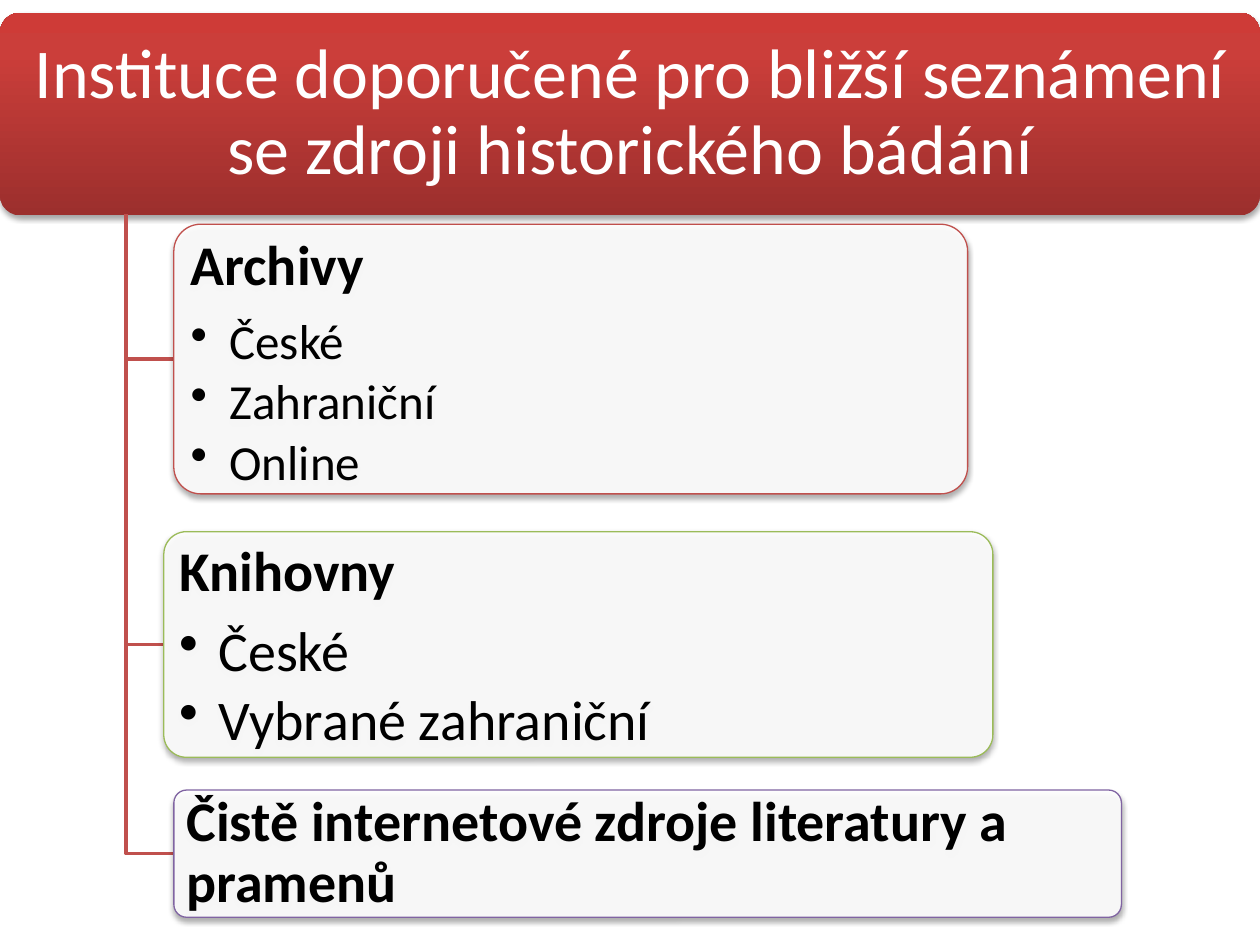
import copy

import lxml.etree
import pptx
import pptx.dml.color
import pptx.enum.shapes
import pptx.enum.text
import pptx.oxml.ns
import pptx.util

Inches, Pt = pptx.util.Inches, pptx.util.Pt
ANCHOR = pptx.enum.text.MSO_ANCHOR
ALIGN = pptx.enum.text.PP_ALIGN
qn = pptx.oxml.ns.qn

RED = "C0504D"
TRUNK_X, TRUNK_TOP = 1, 1.7

# Box (left, top, width, height), outline, heading, bullets, bullet size, anchor
CARDS = [
    ((1.38, 1.78, 6.3, 2.14), RED, "Archivy",
     ["České", "Zahraniční", "Online"], 28, ANCHOR.TOP),
    ((1.3, 4.22, 6.58, 1.79), "9BBB59", "Knihovny",
     ["České", "Vybrané zahraniční"], 32, ANCHOR.TOP),
    ((1.38, 6.27, 7.52, 1.01), "8064A2",
     "Čistě internetové zdroje literatury a pramenů", [], 32, ANCHOR.MIDDLE),
]


def rgb(color):
    return pptx.dml.color.RGBColor.from_string(color)


def add_child(parent, tag, **attributes):
    return lxml.etree.SubElement(parent, qn(tag), attributes)


def add_rounded_box(slide, box):
    """Rounded rectangle with a soft shadow below it."""
    panel = slide.shapes.add_shape(
        pptx.enum.shapes.MSO_SHAPE.ROUNDED_RECTANGLE, *map(Inches, box))
    panel.adjustments[0] = 0.1
    panel.shadow.inherit = False
    effects = panel._element.spPr.find(qn("a:effectLst"))
    shadow = add_child(effects, "a:outerShdw", blurRad=str(Pt(3.1)),
                       dist=str(Pt(1.8)), dir="5400000", rotWithShape="0")
    add_child(add_child(shadow, "a:srgbClr", val="000000"), "a:alpha", val="35000")
    return panel


def set_frame(frame, anchor, side, vertical):
    frame.word_wrap = True
    frame.auto_size = pptx.enum.text.MSO_AUTO_SIZE.NONE
    frame.vertical_anchor = anchor
    frame.margin_left = frame.margin_right = Inches(side)
    frame.margin_top = frame.margin_bottom = Inches(vertical)


def format_paragraph(paragraph, size, color, after, align=ALIGN.LEFT, bold=False):
    paragraph.alignment = align
    paragraph.line_spacing = 0.9
    paragraph.space_before = Pt(0)
    paragraph.space_after = Pt(round(size * after, 1))
    font = paragraph.font
    font.name, font.size, font.bold = "Calibri", Pt(size), bold
    font.color.rgb = rgb(color)


def add_header(slide, box):
    # Gradient band, dark at the bottom
    band = add_rounded_box(slide, box)
    band.line.fill.background()
    band.fill.gradient()
    band.fill.gradient_angle = 90
    first = band.fill.gradient_stops[0]._gs
    first.addnext(copy.deepcopy(first))
    stops = [(0, "9C2F2D"), (0.8, "CB3E3A"), (1, "CE3B37")]
    for stop, (position, color) in zip(band.fill.gradient_stops, stops):
        stop.position = position
        stop.color.rgb = rgb(color)

    # Title in front of the band
    left, top, width, height = box
    title = slide.shapes.title
    band._element.addnext(title._element)
    title.left, title.top = Inches(left + 0.05), Inches(top + 0.05)
    title.width, title.height = Inches(width - 0.1), Inches(height - 0.1)
    set_frame(title.text_frame, ANCHOR.MIDDLE, 0.08, 0.06)
    title.text_frame.text = ("Instituce doporučené pro bližší seznámení "
                             "se zdroji historického bádání")
    format_paragraph(title.text_frame.paragraphs[0], 40, "FFFFFF", 0.35, ALIGN.CENTER)


def add_branch(slide, box):
    """Elbow line from the trunk to the middle of a card's left edge."""
    left, top, _, height = box
    middle = top + height / 2
    builder = slide.shapes.build_freeform(Inches(TRUNK_X), Inches(TRUNK_TOP))
    builder.add_line_segments(
        [(Inches(TRUNK_X), Inches(middle)), (Inches(left), Inches(middle))],
        close=False)
    branch = builder.convert_to_shape()
    branch.fill.background()
    branch.line.color.rgb = rgb(RED)
    branch.line.width = Pt(2)
    branch.shadow.inherit = False


def add_card(slide, box, outline, heading, bullets, bullet_size, anchor):
    card = add_rounded_box(slide, box)
    card.fill.solid()
    card.fill.fore_color.rgb = rgb("FFFFFF")
    fill_color = card._element.spPr.find(qn("a:solidFill"))[0]
    add_child(fill_color, "a:alpha", val="90000")
    card.line.color.rgb = rgb(outline)
    card.line.width = Pt(0.75)

    # Bold heading, then bullets
    frame = card.text_frame
    set_frame(frame, anchor, 0.07, 0.04)
    frame.text = heading
    format_paragraph(frame.paragraphs[0], 32, "000000", 0.35, bold=True)
    for bullet in bullets:
        paragraph = frame.add_paragraph()
        paragraph.text = bullet
        paragraph.level = 1
        format_paragraph(paragraph, bullet_size, "000000", 0.15)
        properties = paragraph._p.get_or_add_pPr()
        properties.set("marL", str(Inches(0.31)))
        properties.set("indent", str(-Inches(0.31)))
        mark = lxml.etree.Element(qn("a:buChar"), char="•")
        properties.find(qn("a:defRPr")).addprevious(mark)


def main():
    deck = pptx.Presentation()
    deck.slide_width, deck.slide_height = Inches(10), Inches(7.5)
    slide = deck.slides.add_slide(deck.slide_layouts.get_by_name("Title Only"))
    add_header(slide, (0, 0.1, 10, 1.61))
    for box, *content in CARDS:
        add_branch(slide, box)
        add_card(slide, box, *content)
    deck.save("out.pptx")


if __name__ == "__main__":
    main()
